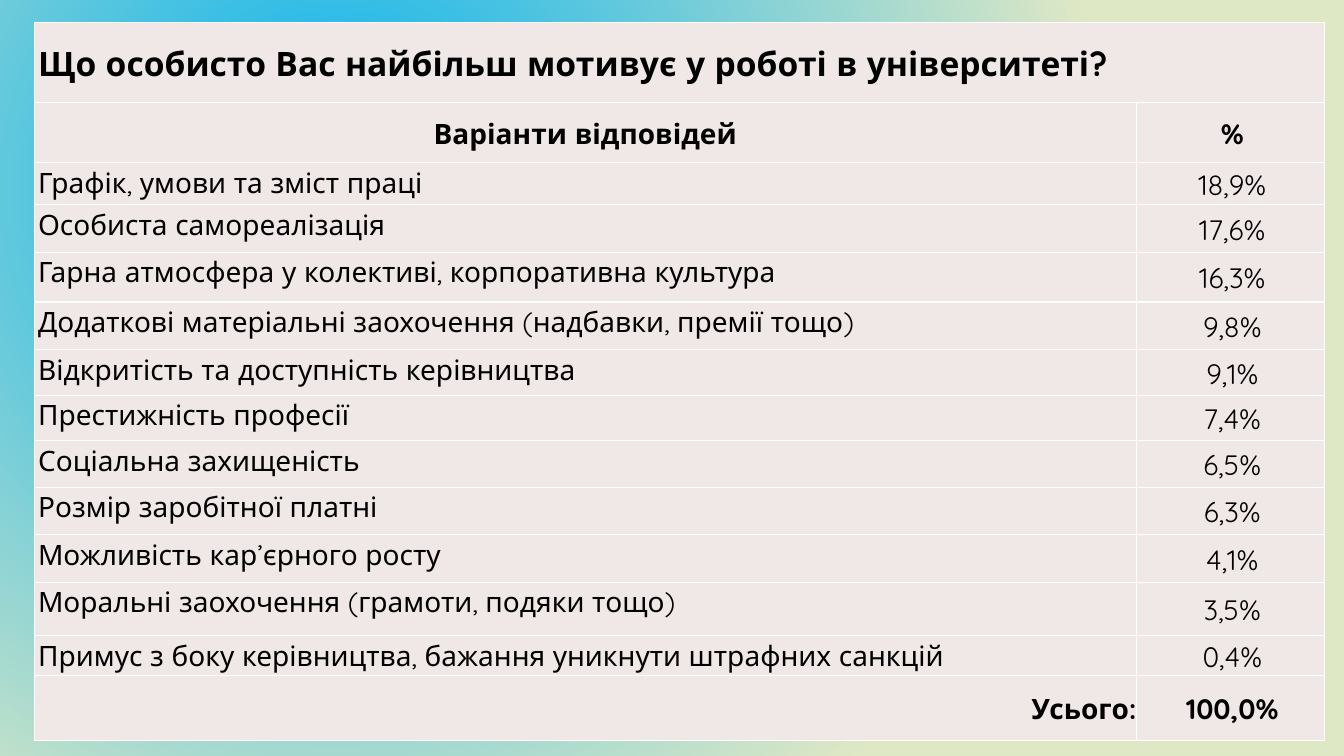
from lxml import etree
from pptx import Presentation, util as u
from pptx.dml.color import RGBColor
from pptx.enum import text
from pptx.oxml import ns

QUESTION = "Що особисто Вас найбільш мотивує у роботі в університеті?"
HEADINGS = ("Варіанти відповідей", "%")
ANSWERS = [
    ("Графік, умови та зміст праці", "18,9%"),
    ("Особиста самореалізація", "17,6%"),
    ("Гарна атмосфера у колективі, корпоративна культура", "16,3%"),
    ("Додаткові матеріальні заохочення (надбавки, премії тощо)", "9,8%"),
    ("Відкритість та доступність керівництва", "9,1%"),
    ("Престижність професії", "7,4%"),
    ("Соціальна захищеність", "6,5%"),
    ("Розмір заробітної платні", "6,3%"),
    ("Можливість кар’єрного росту", "4,1%"),
    ("Моральні заохочення (грамоти, подяки тощо)", "3,5%"),
    ("Примус з боку керівництва, бажання уникнути штрафних санкцій", "0,4%"),
]
TOTAL = ("Усього:", "100,0%")

COLUMN_WIDTHS = (27.78, 4.73)
ROW_HEIGHTS = (2.02, 1.52, 1.06, 1.2, 1.25, 1.2, 1.15, 1.15, 1.17, 1.2, 1.2, 1.34, 1, 1.64)
INDENT = u.Cm(0.1)
FONT = "Quicksand"
BLACK = RGBColor(0x00, 0x00, 0x00)
WHITE = RGBColor(0xFF, 0xFF, 0xFF)
PANEL = RGBColor(0xF0, 0xE8, 0xE7)
SKY = RGBColor(0x00, 0xB0, 0xF0)
LIME = RGBColor(0xDF, 0xE8, 0xC4)

LEFT, CENTER, RIGHT, JUSTIFY = (
    text.PP_ALIGN.LEFT, text.PP_ALIGN.CENTER, text.PP_ALIGN.RIGHT, text.PP_ALIGN.JUSTIFY)
TOP, MIDDLE = text.MSO_ANCHOR.TOP, text.MSO_ANCHOR.MIDDLE


def paint_background(slide):
    """Radial gradient centred in the upper left quarter."""
    fill = slide.background.fill
    fill.gradient()
    for stop, color in zip(fill.gradient_stops, (SKY, LIME)):
        stop.color.rgb = color
    gradient = slide.element.find(".//" + ns.qn("a:gradFill"))
    gradient.remove(gradient.find(ns.qn("a:lin")))
    circle = etree.SubElement(gradient, ns.qn("a:path"), path="circle")
    etree.SubElement(circle, ns.qn("a:fillToRect"),
                     l="50000", t="50000", r="100000", b="100000")


def add_borders(cell):
    properties = cell._tc.get_or_add_tcPr()
    for position, side in enumerate(("lnL", "lnR", "lnT", "lnB")):
        line = etree.Element(ns.qn("a:" + side), w=str(u.Pt(1)))
        solid = etree.SubElement(line, ns.qn("a:solidFill"))
        etree.SubElement(solid, ns.qn("a:srgbClr"), val=str(WHITE))
        properties.insert(position, line)


def fill_cell(cell, wording="", align=LEFT, anchor=MIDDLE, size=20, bold=False, indent=INDENT):
    cell.margin_left = cell.margin_right = cell.margin_top = cell.margin_bottom = 0
    cell.vertical_anchor = anchor
    cell.fill.solid()
    cell.fill.fore_color.rgb = PANEL
    add_borders(cell)
    if not wording:
        return
    cell.text = wording
    para = cell.text_frame.paragraphs[0]
    para.alignment = align
    para.line_spacing = 1.07
    para.font.name = FONT
    para.font.size = u.Pt(size)
    para.font.bold = bold
    para.font.color.rgb = BLACK
    properties = para._p.get_or_add_pPr()
    properties.set("marL", str(indent))
    properties.set("indent", "0")


def main():
    deck = Presentation()
    deck.slide_width, deck.slide_height = u.Cm(33.87), u.Cm(19.05)
    slide = deck.slides.add_slide(deck.slide_layouts[6])
    paint_background(slide)

    # Table grid
    table = slide.shapes.add_table(
        len(ROW_HEIGHTS), len(COLUMN_WIDTHS), u.Cm(0.86), u.Cm(0.56),
        u.Cm(sum(COLUMN_WIDTHS)), u.Cm(sum(ROW_HEIGHTS))).table
    for column, width in zip(table.columns, COLUMN_WIDTHS):
        column.width = u.Cm(width)
    for row, height in zip(table.rows, ROW_HEIGHTS):
        row.height = u.Cm(height)

    # Question across both columns
    fill_cell(table.cell(0, 0), QUESTION, JUSTIFY, size=24, bold=True)
    fill_cell(table.cell(0, 1))
    table.cell(0, 0).merge(table.cell(0, 1))

    # Headings, answers and total
    for index, (label, share) in enumerate([HEADINGS, *ANSWERS, TOTAL], start=1):
        label_cell, share_cell = table.cell(index, 0), table.cell(index, 1)
        is_answer = (label, share) in ANSWERS
        if is_answer:
            fill_cell(label_cell, label, anchor=TOP)
        else:
            align = RIGHT if label == TOTAL[0] else CENTER
            fill_cell(label_cell, label, align, bold=True, indent=0)
        fill_cell(share_cell, share, CENTER, bold=not is_answer)

    deck.save("out.pptx")


if __name__ == "__main__":
    main()
